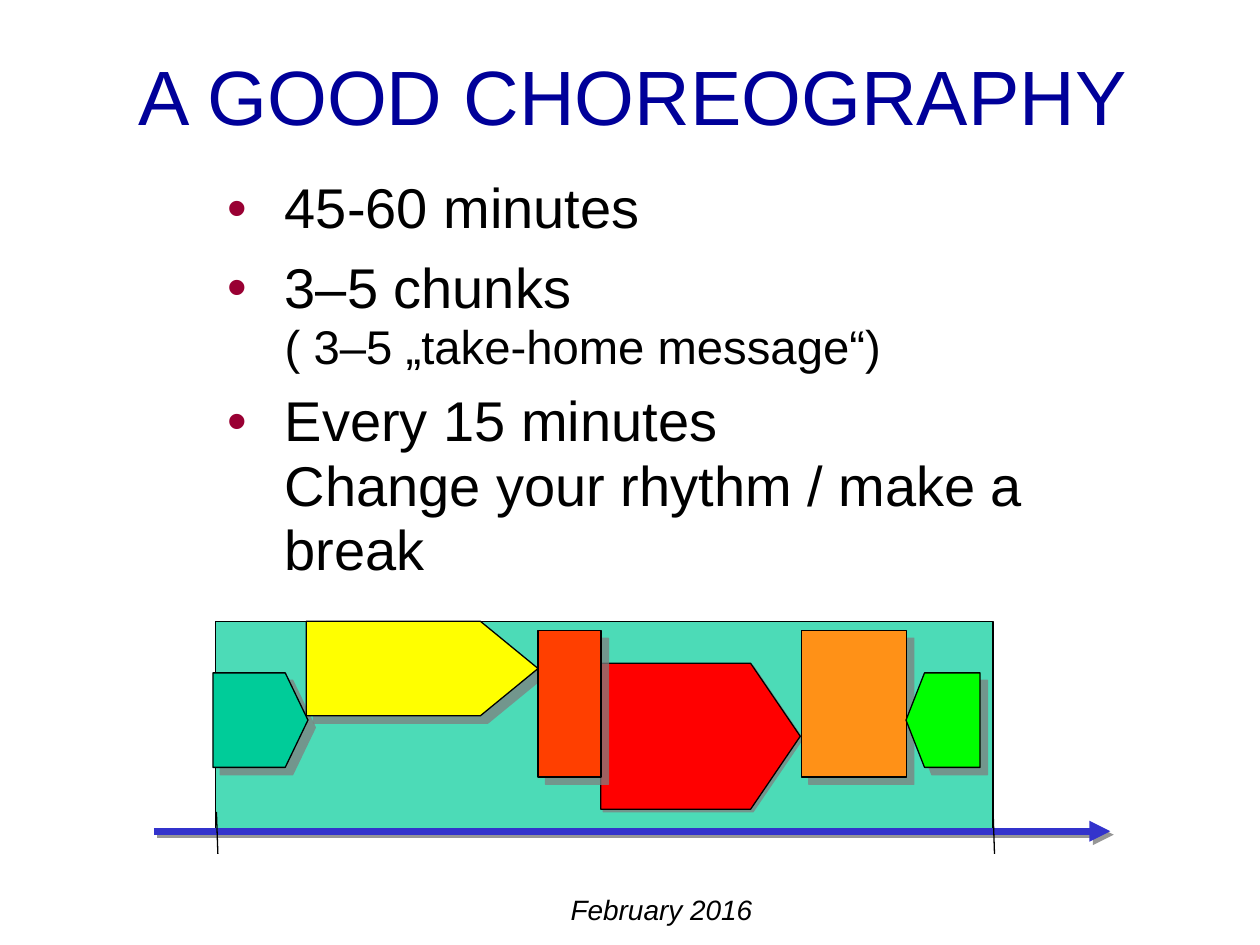
from lxml.etree import SubElement
from pptx import Presentation
from pptx.dml.color import RGBColor
from pptx.enum.shapes import MSO_CONNECTOR, MSO_SHAPE
from pptx.enum.text import MSO_ANCHOR, MSO_AUTO_SIZE, PP_ALIGN
from pptx.oxml.ns import qn
from pptx.util import Pt

COLORS = {
    "title": "000099", "text": "000000", "bullet": "990033", "axis": "3333CC",
    "teal": "00CC99", "yellow": "FFFF00", "red": "FF0000", "vermilion": "FF3F00",
    "orange": "FF9117", "green": "00FF00", "shadow": "808080", "axis shadow": "969696",
}


def add_shadow(effects, color, opacity, distance):
    shadow = SubElement(effects, qn("a:outerShdw"), blurRad="0", dist=str(Pt(distance)),
                        dir="2700000", algn="ctr", rotWithShape="0")
    tint = SubElement(shadow, qn("a:srgbClr"), val=COLORS[color])
    SubElement(tint, qn("a:alpha"), val=str(opacity * 1000))


def style_font(font, size, color):
    font.name = "Arial"
    font.size = Pt(size)
    font.color.rgb = RGBColor.from_string(COLORS[color])


presentation = Presentation()
presentation.slide_width, presentation.slide_height = Pt(720), Pt(540)
slide = presentation.slides.add_slide(presentation.slide_layouts[1])

title = slide.shapes.title
title.left, title.top, title.width, title.height = Pt(20), Pt(0), Pt(684), Pt(108)
title.text_frame.text = "A GOOD CHOREOGRAPHY"
title.text_frame.auto_size = MSO_AUTO_SIZE.NONE
title.text_frame.vertical_anchor = MSO_ANCHOR.MIDDLE
title.text_frame.paragraphs[0].alignment = PP_ALIGN.CENTER
style_font(title.text_frame.paragraphs[0].font, 44, "title")

body = slide.placeholders[1]
body.left, body.top, body.width, body.height = Pt(118), Pt(96.5), Pt(548), Pt(216)
body.text_frame.text = (
    "45-60 minutes\n3–5 chunks \v( 3–5 „take-home message“)\n"
    "Every 15 minutes \vChange your rhythm / make a break"
)
body.text_frame.auto_size = MSO_AUTO_SIZE.NONE
for index, paragraph in enumerate(body.text_frame.paragraphs):
    paragraph.line_spacing = 0.96 if index else 0.99
    paragraph.space_before = Pt(8.4 if index else 0)
    properties = paragraph._p.get_or_add_pPr()
    properties.set("marL", str(Pt(37.5)))
    properties.set("indent", str(Pt(-32.5)))
    bullet_color = SubElement(properties, qn("a:buClr"))
    SubElement(bullet_color, qn("a:srgbClr"), val=COLORS["bullet"])
    SubElement(properties, qn("a:buFont"), typeface="Arial")
    SubElement(properties, qn("a:buChar"), char="•")
    style_font(paragraph.font, 32, "text")
body.text_frame.paragraphs[1].runs[1].font.size = Pt(27)

footer = slide.shapes.add_textbox(Pt(36), Pt(502.5), Pt(684), Pt(34))
footer.text_frame.word_wrap = True
footer.text_frame.vertical_anchor = MSO_ANCHOR.MIDDLE
footer.text_frame.text = "February 2016"
footer_paragraph = footer.text_frame.paragraphs[0]
footer_paragraph.alignment = PP_ALIGN.CENTER
style_font(footer_paragraph.font, 16, "text")
footer_paragraph.font.italic = True

session = slide.shapes.add_shape(MSO_SHAPE.RECTANGLE, Pt(123), Pt(355), Pt(444.5), Pt(118.5))
session.shadow.inherit = False
session.fill.solid()
session.fill.fore_color.rgb = RGBColor.from_string(COLORS["teal"])
session_color = session._element.spPr.find(qn("a:solidFill"))[0]
SubElement(session_color, qn("a:alpha"), val="70000")
session.line.color.rgb = RGBColor.from_string(COLORS["text"])
session.line.width = Pt(0.75)

for start_x, start_y, end_x, end_y, color, width in [
    (88, 475, 634.5, 475, "axis", 4),
    (123.7, 464, 124.5, 488, "text", 0.75),
    (567.5, 464, 568.3, 488, "text", 0.75),
]:
    connector = slide.shapes.add_connector(
        MSO_CONNECTOR.STRAIGHT, Pt(start_x), Pt(start_y), Pt(end_x), Pt(end_y))
    connector.line.color.rgb = RGBColor.from_string(COLORS[color])
    connector.line.width = Pt(width)
    effects = SubElement(connector._element.spPr, qn("a:effectLst"))
    if color == "axis":
        SubElement(connector.line._get_or_add_ln(), qn("a:tailEnd"), type="triangle")
        add_shadow(effects, "axis shadow", 100, 2.8)

for color, left, top, width, height, point, rotation, distance in [
    ("teal", 121.7, 384.5, 54.3, 54, 0.24, 0, 6),
    ("yellow", 175, 355, 132.5, 54, 0.61, 0, 6),
    ("red", 343.3, 379, 114, 83.5, 0.34, 0, 2),
    ("vermilion", 307.5, 360.5, 36, 83.5, None, 0, 6),
    ("orange", 458, 360.5, 60, 83.5, None, 0, 6),
    ("green", 517.7, 384.5, 42.3, 54, 0.25, 180, 6),
]:
    kind = MSO_SHAPE.PENTAGON if point else MSO_SHAPE.RECTANGLE
    chunk = slide.shapes.add_shape(kind, Pt(left), Pt(top), Pt(width), Pt(height))
    if point:
        chunk.adjustments[0] = point
    chunk.rotation = rotation
    chunk.fill.solid()
    chunk.fill.fore_color.rgb = RGBColor.from_string(COLORS[color])
    chunk.line.color.rgb = RGBColor.from_string(COLORS["text"])
    chunk.line.width = Pt(0.75)
    chunk.shadow.inherit = False
    add_shadow(chunk._element.spPr.find(qn("a:effectLst")), "shadow", 75, distance)

presentation.save("out.pptx")
